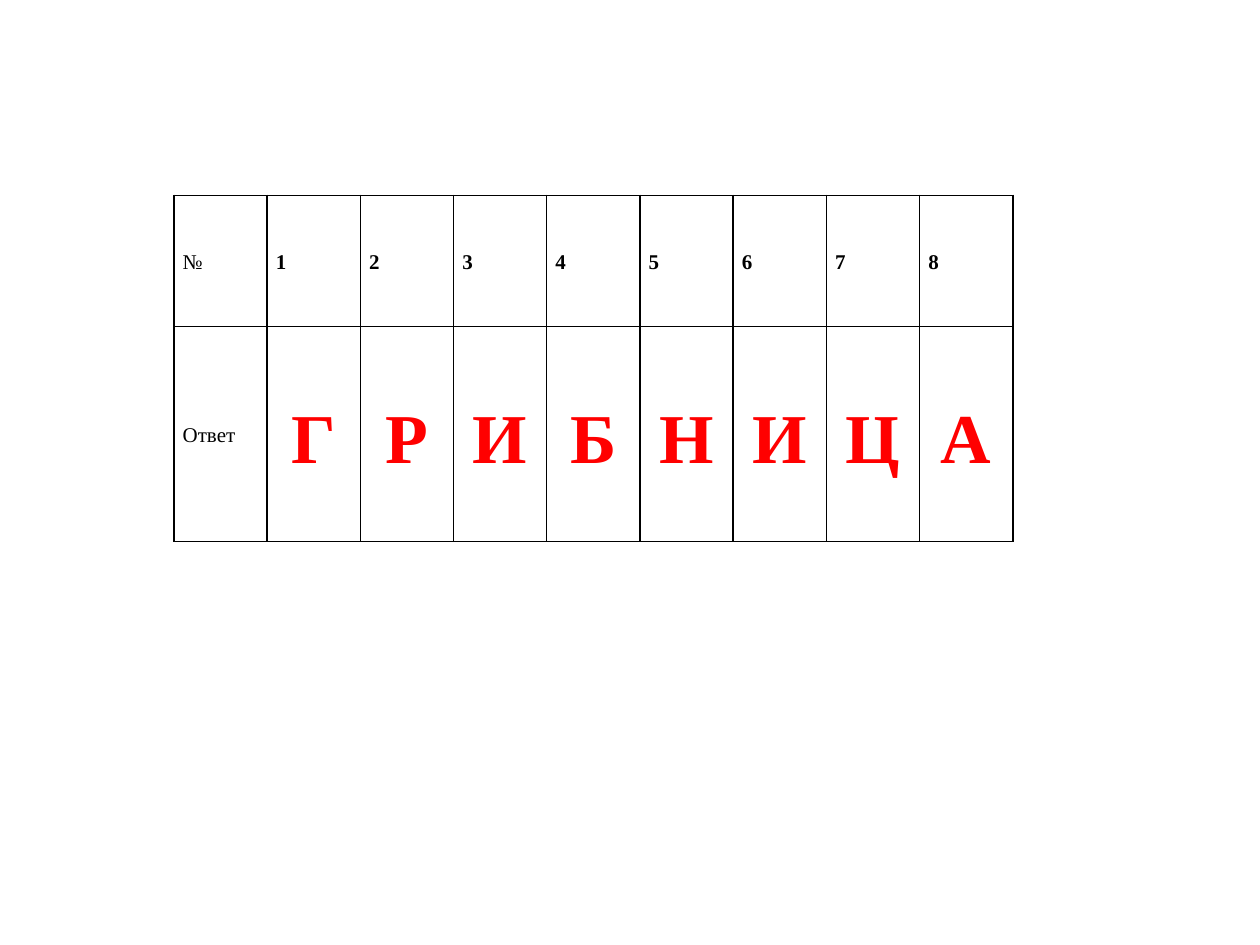
from lxml import etree
from pptx import Presentation
from pptx.dml.color import RGBColor
from pptx.enum.text import MSO_ANCHOR, PP_ALIGN
from pptx.oxml.ns import qn
from pptx.util import Inches, Pt

MIDDLE = MSO_ANCHOR.MIDDLE
LEFT = PP_ALIGN.LEFT
CENTER = PP_ALIGN.CENTER

FONT = "Times New Roman"
BLACK = "000000"
RED = "FF0000"
ANSWER = "ГРИБНИЦА"


def color(hex_string):
    return RGBColor.from_string(hex_string)


class SlideBuilder:
    """Holds the text style and the current slide."""

    def __init__(self, slide, font_name):
        self.slide = slide
        self.font_name = font_name

    def table(self, left, top, column_widths, row_heights):
        table = self.slide.shapes.add_table(
            len(row_heights), len(column_widths), Inches(left), Inches(top),
            Inches(sum(column_widths)), Inches(sum(row_heights))).table
        table.first_row = False
        table.horz_banding = False
        for column, width in zip(table.columns, column_widths):
            column.width = Inches(width)
        for row, height in zip(table.rows, row_heights):
            row.height = Inches(height)
        return table

    def cell(self, cell, text, size=12, bold=False, hex_color=BLACK, align=LEFT):
        cell.margin_left = cell.margin_right = Inches(0.07)
        cell.margin_top = cell.margin_bottom = 0
        cell.vertical_anchor = MIDDLE
        self.borders(cell, BLACK, 1)
        cell.fill.background()
        cell.text = text
        paragraph = cell.text_frame.paragraphs[0]
        paragraph.alignment = align
        paragraph.line_spacing = 1.15
        font = paragraph.font
        font.name = self.font_name
        font.size = Pt(size)
        font.bold = bold
        font.color.rgb = color(hex_color)

    def borders(self, cell, hex_color, width):
        properties = cell._tc.get_or_add_tcPr()
        for side in ("a:lnL", "a:lnR", "a:lnT", "a:lnB"):
            line = etree.SubElement(properties, qn(side), w=str(Pt(width)))
            fill = etree.SubElement(line, qn("a:solidFill"))
            etree.SubElement(fill, qn("a:srgbClr"), val=hex_color)


def main():
    presentation = Presentation()
    presentation.slide_width = Inches(10)
    presentation.slide_height = Inches(7.5)
    slide = presentation.slides.add_slide(presentation.slide_layouts[6])
    builder = SlideBuilder(slide, FONT)

    # Answer grid
    table = builder.table(1.38, 1.55, [0.74] * (len(ANSWER) + 1), [1.04, 1.71])

    # Row labels
    builder.cell(table.cell(0, 0), "№")
    builder.cell(table.cell(1, 0), "Ответ")

    # Question numbers and answer letters
    for number, letter in enumerate(ANSWER, start=1):
        builder.cell(table.cell(0, number), str(number), bold=True)
        builder.cell(table.cell(1, number), letter, size=40, bold=True,
                     hex_color=RED, align=CENTER)

    presentation.save("out.pptx")


if __name__ == "__main__":
    main()
